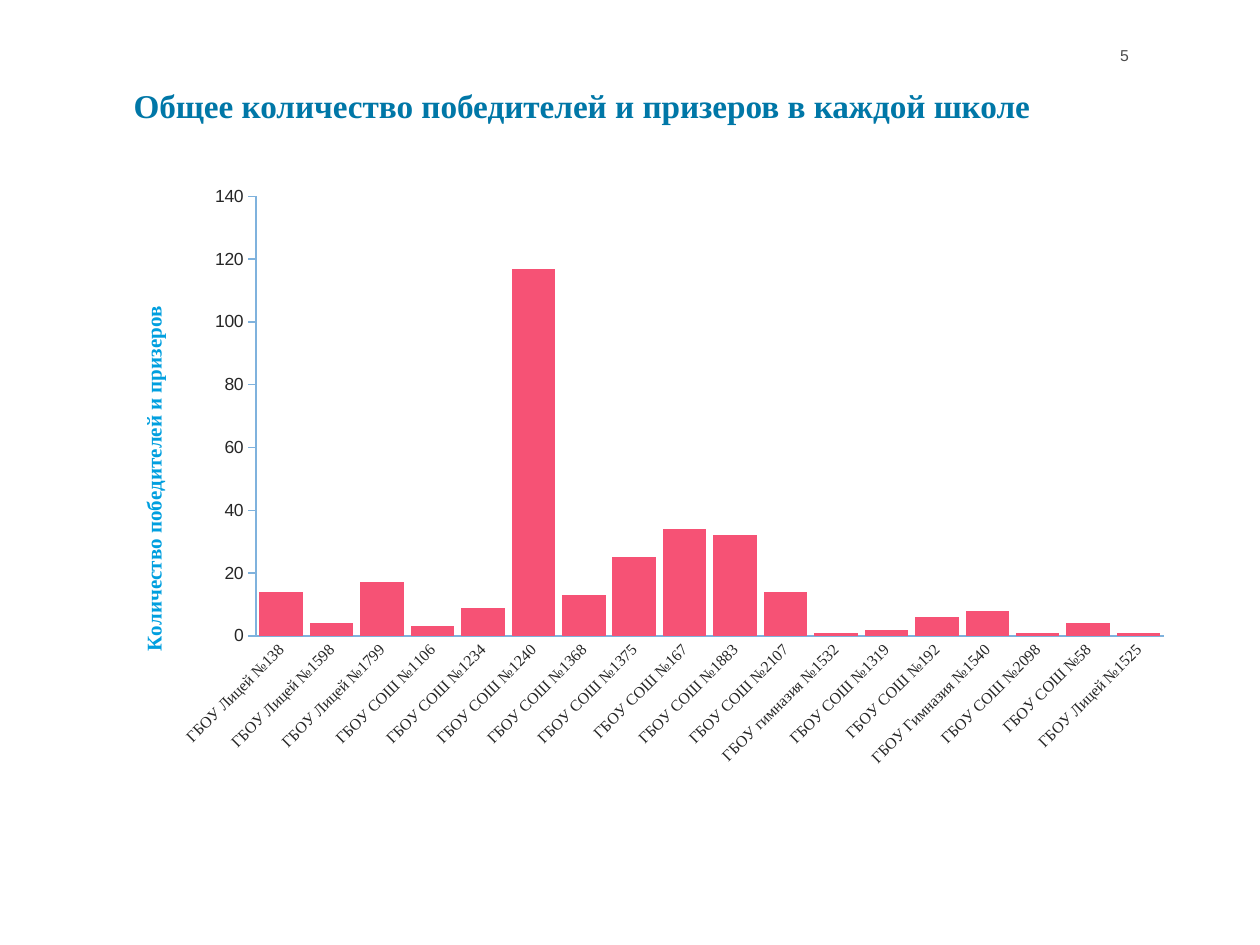
from lxml.etree import SubElement
from pptx import Presentation
from pptx.chart.data import CategoryChartData
from pptx.dml.color import RGBColor
from pptx.enum.chart import XL_CHART_TYPE, XL_TICK_MARK
from pptx.enum.text import MSO_ANCHOR, MSO_AUTO_SIZE, PP_ALIGN
from pptx.oxml.ns import qn
from pptx.util import Inches, Pt

WIDTH, HEIGHT = Inches(10), Inches(7.5)
SANS, SERIF = "Arial", "Times New Roman"
COLORS = {
    "title": "0077A7",
    "accent": "009FDF",
    "number": "4C4C4C",
    "label": "262626",
    "axis": "7FB2DD",
    "bar": "F65275",
}
SCHOOLS = {
    "ГБОУ Лицей №138": 14,
    "ГБОУ Лицей №1598": 4,
    "ГБОУ Лицей №1799": 17,
    "ГБОУ СОШ №1106": 3,
    "ГБОУ СОШ №1234": 9,
    "ГБОУ СОШ №1240": 117,
    "ГБОУ СОШ №1368": 13,
    "ГБОУ СОШ №1375": 25,
    "ГБОУ СОШ №167": 34,
    "ГБОУ СОШ №1883": 32,
    "ГБОУ СОШ №2107": 14,
    "ГБОУ гимназия №1532": 1,
    "ГБОУ СОШ №1319": 2,
    "ГБОУ СОШ №192": 6,
    "ГБОУ Гимназия №1540": 8,
    "ГБОУ СОШ №2098": 1,
    "ГБОУ СОШ №58": 4,
    "ГБОУ Лицей №1525": 1,
}


def rgb(name):
    return RGBColor.from_string(COLORS[name])


def box(x, y, w, h):
    return [Inches(v) for v in (x, y, w, h)]


def style(font, face, size, color, bold=False):
    font.name, font.size, font.bold = face, Pt(size), bold
    font.color.rgb = rgb(color)


def write(sp, text, align, *look):
    tf = sp.text_frame
    tf.word_wrap = True
    tf.auto_size = MSO_AUTO_SIZE.NONE
    tf.vertical_anchor = MSO_ANCHOR.TOP
    tf.margin_left = tf.margin_right = tf.margin_top = tf.margin_bottom = 0
    p = tf.paragraphs[0]
    p.alignment = align
    r = p.add_run()
    r.text = text
    style(r.font, *look)
    return p


def add_title(slide, text):
    sp = slide.shapes.title
    sp.left, sp.top, sp.width, sp.height = box(1.06, 0.68, 8.43, 0.57)
    p = write(sp, text, PP_ALIGN.LEFT, SERIF, 19, "title", True)
    p.line_spacing = Pt(22.5)


def add_number(slide, text):
    sp = slide.shapes.add_textbox(*box(8.12, 0.36, 0.84, 0.36))
    write(sp, text, PP_ALIGN.RIGHT, SANS, 9, "number")


def place(parent, before, **settings):
    for old in parent.findall(qn("c:layout")):
        parent.remove(old)
    layout = SubElement(parent, qn("c:layout"))
    manual = SubElement(layout, qn("c:manualLayout"))
    for tag, value in settings.items():
        SubElement(manual, qn(f"c:{tag}")).set("val", str(value))
    parent.find(qn(before)).addprevious(layout)


def style_axis(axis, face, size, tick):
    style(axis.tick_labels.font, face, size, "label")
    axis.has_major_gridlines = False
    axis.major_tick_mark = tick
    axis.minor_tick_mark = XL_TICK_MARK.NONE
    axis.format.line.color.rgb = rgb("axis")
    axis.format.line.width = Pt(0.75)


def add_value_title(axis, text):
    title = axis.axis_title
    r = title.text_frame.paragraphs[0].add_run()
    r.text = text
    style(r.font, SERIF, 12, "accent", True)
    body = title.text_frame._txBody.find(qn("a:bodyPr"))
    body.set("rot", "-5400000")
    body.set("vert", "horz")
    place(title._element, "c:overlay", xMode="edge", yMode="edge", x=0.03, y=0.21)


def add_school_chart(slide):
    data = CategoryChartData()
    data.categories = list(SCHOOLS)
    data.add_series("Series 1", list(SCHOOLS.values()))
    frame = slide.shapes.add_chart(
        XL_CHART_TYPE.COLUMN_CLUSTERED, *box(0.83, 1.39, 8.58, 4.8), data
    )
    chart = frame.chart
    chart.has_title = chart.has_legend = False
    style(chart.font, SANS, 10, "accent")

    plot = chart.plots[0]
    plot.gap_width = 16
    plot.vary_by_categories = False
    fill = plot.series[0].format.fill
    fill.solid()
    fill.fore_color.rgb = rgb("bar")

    cats, vals = chart.category_axis, chart.value_axis
    style_axis(cats, SERIF, 9, XL_TICK_MARK.NONE)
    cats._element.find(qn("c:txPr")).find(qn("a:bodyPr")).set("rot", "-2700000")
    style_axis(vals, SANS, 10, XL_TICK_MARK.OUTSIDE)
    vals.minimum_scale, vals.maximum_scale, vals.major_unit = 0, 140, 20
    add_value_title(vals, "Количество победителей и призеров")
    area = chart._chartSpace.chart.plotArea
    place(area, "c:barChart", layoutTarget="inner", xMode="edge", yMode="edge",
          x=0.14, y=0.035, w=0.84, h=0.727)


def main():
    prs = Presentation()
    prs.slide_width, prs.slide_height = WIDTH, HEIGHT
    slide = prs.slides.add_slide(prs.slide_layouts[5])
    add_number(slide, "5")
    add_title(slide, "Общее количество победителей и призеров в каждой школе")
    add_school_chart(slide)
    prs.save("out.pptx")


if __name__ == "__main__":
    main()
